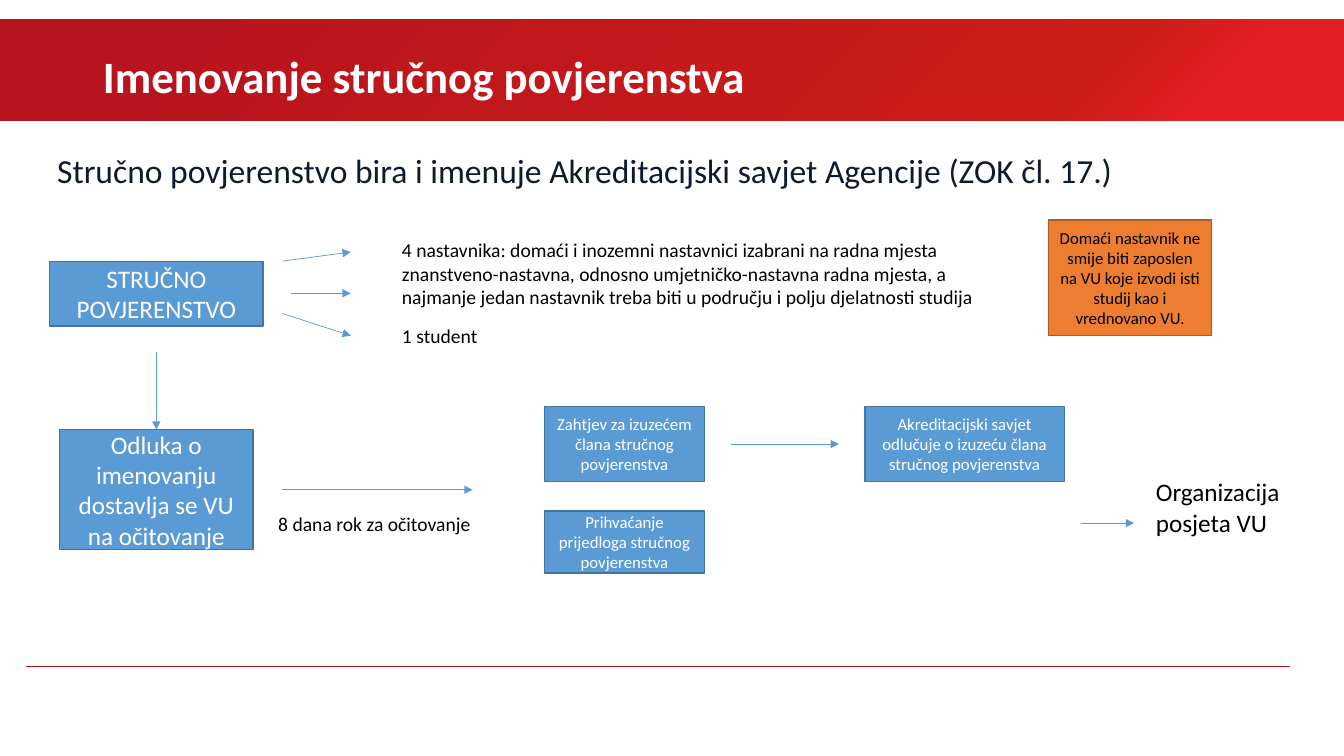
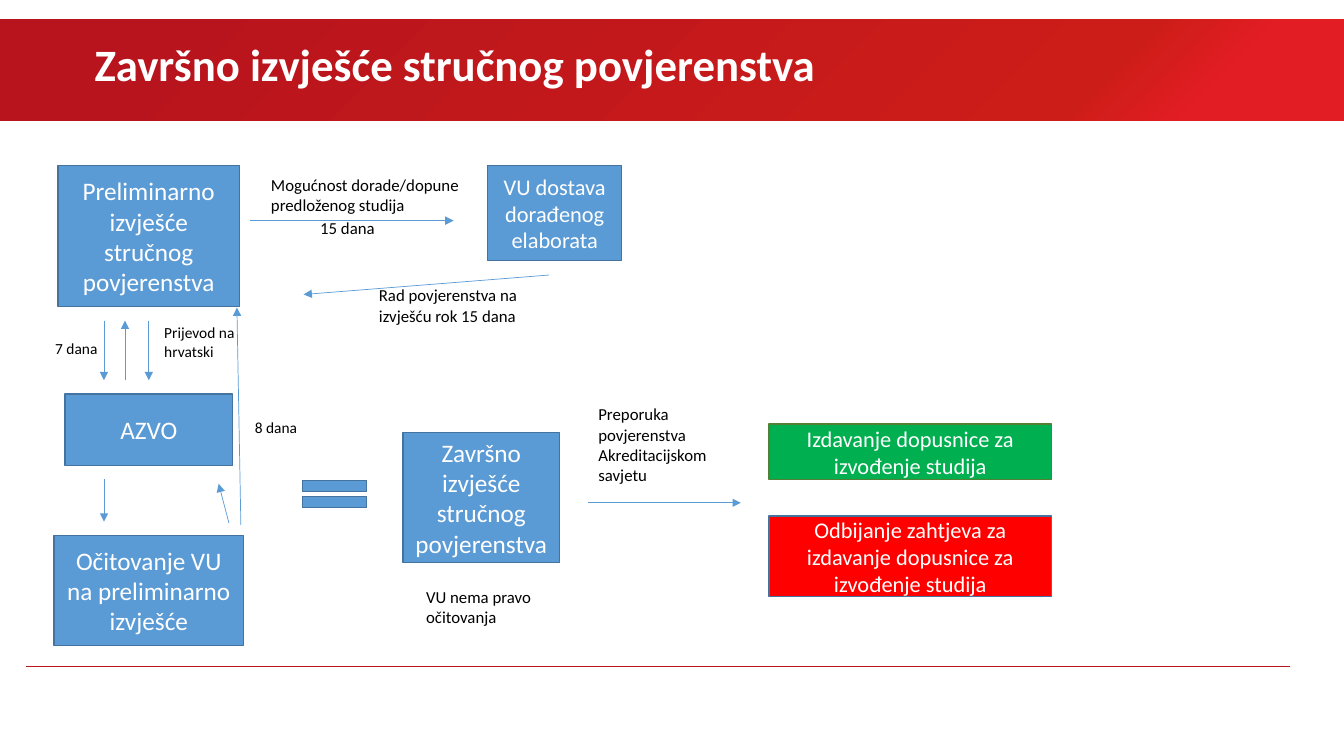
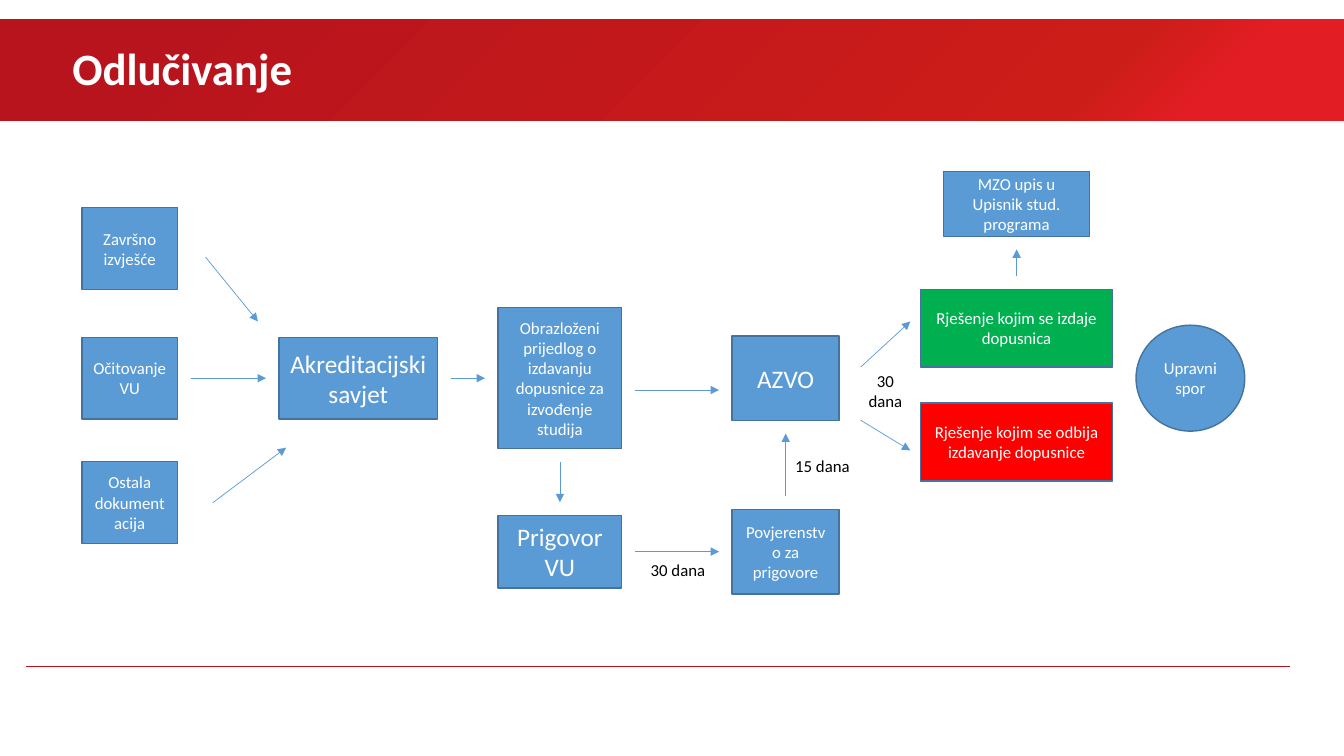
from copy import deepcopy
from dataclasses import dataclass

from lxml.etree import SubElement
from pptx import Presentation
from pptx.dml.color import RGBColor
from pptx.enum.shapes import MSO_CONNECTOR, MSO_SHAPE
from pptx.enum.text import MSO_ANCHOR, MSO_AUTO_SIZE as AUTO_SIZE, PP_ALIGN
from pptx.oxml.ns import qn
from pptx.util import Cm, Pt


@dataclass(frozen=True)
class Theme:
    font: str = "Calibri"
    white: str = "FFFFFF"
    black: str = "000000"
    navy: str = "0F1A2F"
    crimson: str = "B8141D"
    blue: str = "5B9BD5"
    blue_edge: str = "43739E"
    green: str = "00B050"
    green_edge: str = "538035"
    red: str = "FF0000"
    orange: str = "ED7D31"
    orange_edge: str = "AF5C24"
    band: tuple = ((0.11, "E21D24"), (0.2, "CD1D19"), (0.89, "B8141D"))
    title: int = 32
    lead: int = 24
    large: int = 18
    medium: int = 16
    body: int = 14
    small: int = 12
    tiny: int = 11


theme = Theme()
LEFT, CENTER = PP_ALIGN.LEFT, PP_ALIGN.CENTER
RECT, EQUAL, OVAL = MSO_SHAPE.RECTANGLE, MSO_SHAPE.MATH_EQUAL, MSO_SHAPE.OVAL
BLUE = (theme.blue, theme.blue_edge)
GREEN = (theme.green, theme.blue_edge)
GREEN_FRAMED = (theme.green, theme.green_edge)
RED = (theme.red, theme.blue_edge)
ORANGE = (theme.orange, theme.orange_edge)


def write(shape, text, size, color, align=LEFT, anchor=MSO_ANCHOR.TOP, fit=AUTO_SIZE.NONE):
    frame = shape.text_frame
    frame.word_wrap = True
    frame.auto_size = fit
    frame.vertical_anchor = anchor
    paragraph = frame.paragraphs[0]
    paragraph.alignment = align
    run = paragraph.add_run()
    run.text = text
    run.font.name = theme.font
    run.font.size = Pt(size)
    run.font.bold = size == theme.title
    run.font.color.rgb = RGBColor.from_string(color)
    return paragraph


def add_line(slide, ends, color, width, arrow=True):
    line = slide.shapes.add_connector(MSO_CONNECTOR.STRAIGHT, *map(Cm, ends))
    line.line.color.rgb = RGBColor.from_string(color)
    line.line.width = Pt(width)
    if arrow:
        SubElement(line.line._get_or_add_ln(), qn("a:tailEnd"), type="triangle")
    SubElement(line.element.spPr, qn("a:effectLst"))
    return line


panel_x, request_x, request_y = 3.94, 15.74, 11.19
appointment = {
    "title": ("Imenovanje stručnog povjerenstva", 2.34, 1.09),
    "boxes": [
        (RECT, panel_x, 7.4, (5.38, 1.63), BLUE, theme.large, "STRUČNO POVJERENSTVO"),
        (RECT, panel_x, 12.34, (4.88, 3.02), BLUE, theme.large,
         "Odluka o imenovanju dostavlja se VU na očitovanje"),
        (RECT, request_x, request_y, (4.04, 1.9), BLUE, theme.small,
         "Zahtjev za izuzećem člana stručnog povjerenstva"),
        (RECT, request_x, 13.66, (4.04, 1.57), BLUE, theme.small,
         "Prihvaćanje prijedloga stručnog povjerenstva"),
        (RECT, 24.31, request_y, (5.03, 1.9), BLUE, theme.small,
         "Akreditacijski savjet odlučuje o izuzeću člana stručnog povjerenstva"),
        (RECT, 28.48, 7, (4.11, 2.92), ORANGE, theme.small,
         "Domaći nastavnik ne smije biti zaposlen na VU koje izvodi isti studij "
         "kao i vrednovano VU."),
    ],
    "labels": [
        ((1.19, 3.76, 31.47), theme.lead, LEFT,
         "Stručno povjerenstvo bira i imenuje Akreditacijski savjet Agencije (ZOK čl. 17.)"),
        ((9.88, 5.87, 15.34), theme.body, LEFT,
         "4 nastavnika: domaći i inozemni nastavnici izabrani na radna mjesta "
         "znanstveno-nastavna, odnosno umjetničko-nastavna radna mjesta, a najmanje "
         "jedan nastavnik treba biti u području i polju djelatnosti studija"),
        ((9.88, 8.03), theme.body, LEFT, "1 student"),
        ((6.76, 12.78), theme.body, LEFT, "8 dana rok za očitovanje"),
        ((28.88, 11.89, 3.78), theme.large, LEFT, "Organizacija posjeta VU"),
    ],
    "gap": 0.65,
    "links": [("STRUČNO", "Odluka", 0, True), ("Zahtjev", "Akreditacijski", 0, False)],
    "level": [(7.34, 8.84, 7.39), (7.11, 11.91, 12.34), (27.23, 28.58, 13.18)],
    "slanted": [(7.12, start, 8.84, end) for start, end in ((6.58, 6.35), (7.9, 8.46))],
}

report_x, outcome_x = 3.75, 22.94
final_report = {
    "title": ("Završno izvješće stručnog povjerenstva", 2.13, 0.79),
    "boxes": [
        (RECT, report_x, 5.95, (4.57, 3.56), BLUE, theme.large,
         "Preliminarno izvješće stručnog povjerenstva"),
        (RECT, 13.98, 5.37, (3.38, 2.39), BLUE, theme.medium,
         "VU dostava dorađenog elaborata"),
        (RECT, report_x, 10.83, (4.22, 1.8), BLUE, theme.large, "AZVO"),
        (RECT, report_x, 14.88, (4.78, 2.77), BLUE, theme.large,
         "Očitovanje VU na preliminarno izvješće"),
        (EQUAL, 8.43, 12.45, (2.21, 1.17), BLUE, theme.large, ""),
        (RECT, 12.13, 12.54, (3.94, 3.28), BLUE, theme.large,
         "Završno izvješće stručnog povjerenstva"),
        (RECT, outcome_x, 11.39, (7.11, 1.4), GREEN_FRAMED, theme.medium,
         "Izdavanje dopusnice za izvođenje studija"),
        (RECT, outcome_x, 14.02, (7.11, 2.03), RED, theme.medium,
         "Odbijanje zahtjeva za izdavanje dopusnice za izvođenje studija"),
    ],
    "labels": [
        ((6.58, 4.27, 5.44), theme.small, LEFT, "Mogućnost dorade/dopune predloženog studija"),
        ((7.82, 5.36), theme.small, LEFT, "15 dana"),
        ((9.3, 7.06, 4.75), theme.small, LEFT, "Rad povjerenstva na izvješću rok 15 dana"),
        ((3.89, 8.03, 2.41), theme.tiny, LEFT, "Prijevod na hrvatski"),
        ((1.14, 8.41), theme.tiny, LEFT, "7 dana"),
        ((6.17, 10.41), theme.tiny, LEFT, "8 dana"),
        ((14.83, 10.06, 3.84), theme.small, LEFT,
         "Preporuka povjerenstva Akreditacijskom savjetu"),
        ((10.49, 14.66, 3.28), theme.small, LEFT, "VU nema pravo očitovanja"),
    ],
    "gap": 0.35,
    "links": [
        ("Preliminarno", "AZVO", -1.13, False),
        ("AZVO", "Preliminarno", -0.6, False),
        ("Preliminarno", "AZVO", 0, False),
        ("AZVO", "Očitovanje", -1.13, False),
    ],
    "level": [(6.3, 11.43, 5.56), (14.83, 18.67, 12.67)],
    "slanted": [
        (13.84, 6.93, 7.65, 7.42),
        (5.77, 13.18, 5.51, 12.19),
        (6.07, 13.23, 5.97, 7.75),
    ],
}

axis_y, appeal_y = 9.53, 13.9
input_x, council_x, proposal_x, agency_x, ruling_x = 3.27, 9.03, 14.11, 19.8, 25.62
card, unit, ruling = (2.41, 2.06), (2.7, 2.13), (4.85, 1.96)
decision = {
    "title": ("Odlučivanje", 1.57, 0.91),
    "boxes": [
        (RECT, input_x, 6.26, card, BLUE, theme.small, "Završno izvješće"),
        (RECT, input_x, axis_y, card, BLUE, theme.small, "Očitovanje VU"),
        (RECT, input_x, 12.66, card, BLUE, theme.small, "Ostala dokumentacija"),
        (RECT, council_x, axis_y, (3.99, 2.06), BLUE, theme.large, "Akreditacijski savjet"),
        (RECT, proposal_x, axis_y, (3.12, 3.56), BLUE, theme.small,
         "Obrazloženi prijedlog o izdavanju dopusnice za izvođenje studija"),
        (RECT, proposal_x, appeal_y, (3.12, 1.83), BLUE, theme.large, "Prigovor VU"),
        (RECT, agency_x, axis_y, unit, BLUE, theme.large, "AZVO"),
        (RECT, agency_x, appeal_y, unit, BLUE, theme.small, "Povjerenstvo za prigovore"),
        (RECT, ruling_x, 5.14, (3.68, 1.63), BLUE, theme.small,
         "MZO upis u Upisnik stud. programa"),
        (RECT, ruling_x, 8.27, ruling, GREEN, theme.small,
         "Rješenje kojim se izdaje dopusnica"),
        (RECT, ruling_x, 11.14, ruling, RED, theme.small,
         "Rješenje kojim se odbija izdavanje dopusnice"),
        (OVAL, 30, axis_y, (2.74, 2.67), BLUE, theme.small, "Upravni spor"),
    ],
    "labels": [
        ((16.15, 13.97), theme.small, LEFT, "30 dana"),
        ((19.79, 11.35), theme.small, LEFT, "15 dana"),
        ((21.54, 9.22, 1.55), theme.small, CENTER, "30 dana"),
    ],
    "gap": 0.33,
    "links": [
        ("Očitovanje", "Akreditacijski", 0, False),
        ("Akreditacijski", "Obrazloženi", 0, False),
        ("Obrazloženi", "AZVO", 0.3, False),
        ("Obrazloženi", "Prigovor", 0, False),
        ("Prigovor", "Povjerenstvo", 0, False),
        ("Povjerenstvo", "AZVO", 0, False),
        ("Rješenje", "MZO", 0, False),
    ],
    "level": [],
    "slanted": [(5.18, 6.48, 6.5, 8.1), (5.36, 12.67, 7.21, 11.28)]
    + [(21.69, start, 22.94, end) for start, end in ((9.25, 8.1), (10.59, 11.35))],
}

pages = [appointment, final_report, decision]
presentation = Presentation()
presentation.slide_width, presentation.slide_height = Cm(33.87), Cm(19.05)
layout = presentation.slide_layouts[5]
slides = [presentation.slides.add_slide(layout) for page in pages]

band = slides[0].shapes.add_shape(RECT, 0, Cm(0.48), presentation.slide_width, Cm(2.57))
band.shadow.inherit = False
band.line.fill.background()
band.fill.gradient()
band.fill.gradient_angle = 135
stop_list = band.element.find(".//" + qn("a:gsLst"))
stop_list.append(deepcopy(stop_list[-1]))
for stop, (position, color) in zip(band.fill.gradient_stops, theme.band):
    stop.position = position
    stop.color.rgb = RGBColor.from_string(color)
footer_line = add_line(slides[0], (0.66, 16.79, 32.51, 16.79), theme.crimson, 1, arrow=False)
for shared in (band, footer_line):
    layout.shapes.element.insert(2, shared.element)

for slide, page in zip(slides, pages):
    text, left, top = page["title"]
    title = slide.shapes.title
    title.left, title.top, title.width, title.height = map(Cm, (left, top, 26, 1.63))
    write(title, text, theme.title, theme.white)

    boxes = {}
    for kind, x, y, (width, height), (fill, edge), size, text in page["boxes"]:
        place = (x - width / 2, y - height / 2, width, height)
        box = slide.shapes.add_shape(kind, *map(Cm, place))
        box.shadow.inherit = False
        box.fill.solid()
        box.fill.fore_color.rgb = RGBColor.from_string(fill)
        box.line.color.rgb = RGBColor.from_string(edge)
        box.line.width = Pt(1)
        if text:
            color = theme.black if fill == theme.orange else theme.white
            write(box, text, size, color, CENTER, MSO_ANCHOR.MIDDLE)
            boxes.setdefault(text.split()[0], (box, x, y, width / 2, height / 2))

    for (left, top, *width), size, align, text in page["labels"]:
        label_width = Cm(width[0]) if width else Pt(len(text) * size * 0.55) + Cm(0.5)
        label_height = Pt(size * 1.2) + Cm(0.25)
        label = slide.shapes.add_textbox(Cm(left), Cm(top), label_width, label_height)
        is_lead = size == theme.lead
        color = theme.navy if is_lead else theme.black
        paragraph = write(label, text, size, color, align, fit=AUTO_SIZE.SHAPE_TO_FIT_TEXT)
        if is_lead:
            paragraph.line_spacing = 0.9

    for source, target, shift, joined in page["links"]:
        _, x1, y1, half_width1, half_height1 = boxes[source]
        target_box, x2, y2, half_width2, half_height2 = boxes[target]
        if abs(x2 - x1) > abs(y2 - y1):
            ends = (x1 + half_width1 + page["gap"], y1 + shift,
                    x2 - half_width2 - page["gap"], y1 + shift)
        else:
            way = 1 if y2 > y1 else -1
            ends = (x1 + shift, y1 + way * (half_height1 + page["gap"]),
                    x1 + shift, y2 - way * (half_height2 + page["gap"]))
        arrow = add_line(slide, ends, theme.blue, 0.5)
        if joined:
            arrow.end_connect(target_box, 0)

    level = [(start, y, end, y) for start, end, y in page["level"]]
    for ends in level + page["slanted"]:
        add_line(slide, ends, theme.blue, 0.5)

presentation.save("out.pptx")
